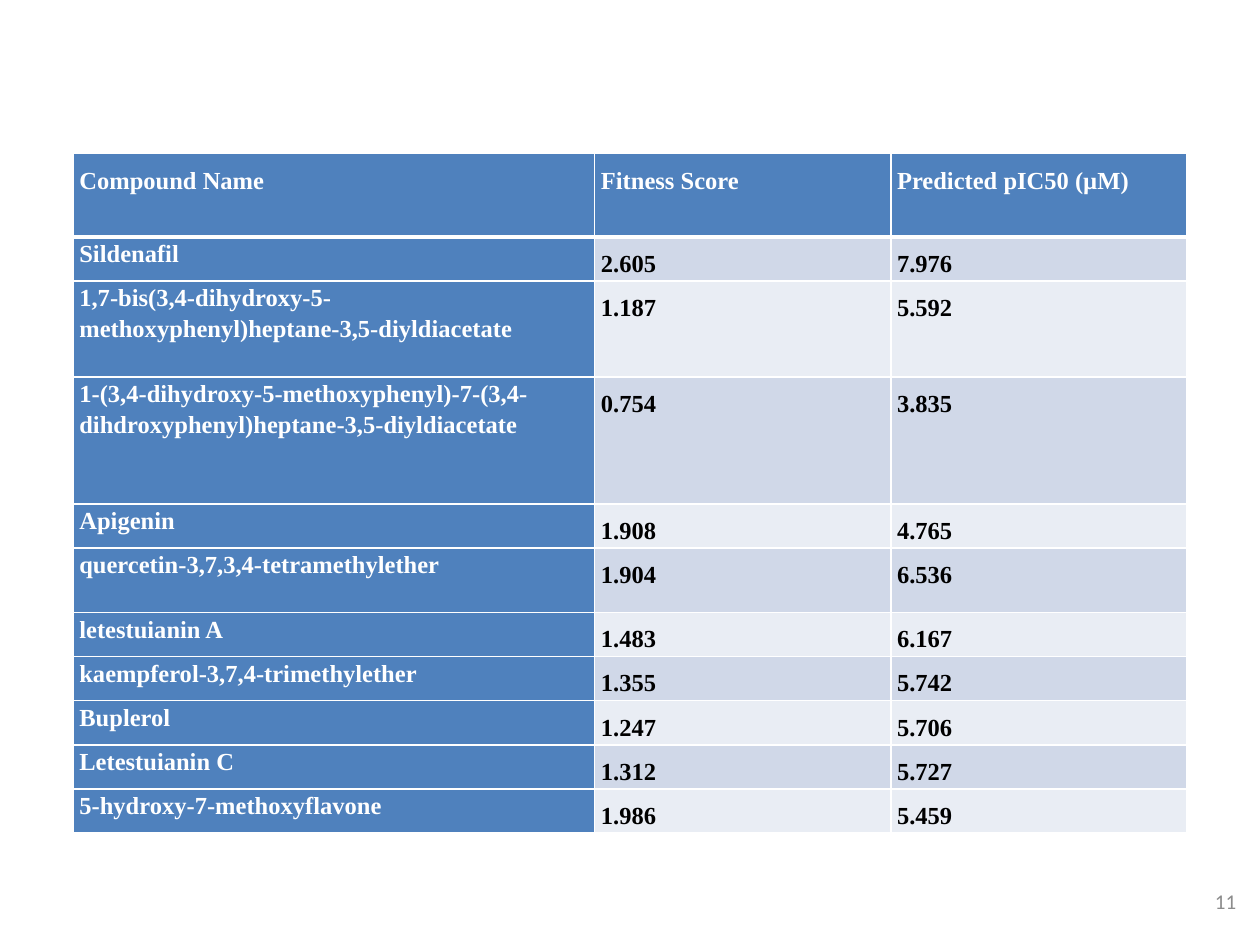
import pptx
import pptx.dml.color
import pptx.enum.text
import pptx.oxml
import pptx.oxml.ns
import pptx.util

Inches = pptx.util.Inches
Pt = pptx.util.Pt
Align = pptx.enum.text.PP_ALIGN
Anchor = pptx.enum.text.MSO_ANCHOR

HEADINGS = ("Compound Name", "Fitness Score", "Predicted pIC50 (µM)")
COMPOUNDS = [
    ("Sildenafil", "2.605", "7.976"),
    ("1,7-bis(3,4-dihydroxy-5-methoxyphenyl)heptane-3,5-diyldiacetate", "1.187", "5.592"),
    ("1-(3,4-dihydroxy-5-methoxyphenyl)-7-(3,4-dihdroxyphenyl)heptane-3,5-diyldiacetate",
     "0.754", "3.835"),
    ("Apigenin", "1.908", "4.765"),
    ("quercetin-3,7,3,4-tetramethylether", "1.904", "6.536"),
    ("letestuianin A", "1.483", "6.167"),
    ("kaempferol-3,7,4-trimethylether", "1.355", "5.742"),
    ("Buplerol", "1.247", "5.706"),
    ("Letestuianin C", "1.312", "5.727"),
    ("5-hydroxy-7-methoxyflavone", "1.986", "5.459"),
]
COLUMN_WIDTHS = (4.14, 2.35, 2.35)
ROW_HEIGHT = 0.33
TALL_ROWS = {0: 0.66, 2: 0.76, 3: 1.01, 5: 0.51}


def color(value):
    return pptx.dml.color.RGBColor.from_string(value)


class SlideBuilder:
    """Holds the style and the current slide, and adds elements to it."""

    table_font = "Times New Roman"
    number_font = "Calibri"
    accent = "4F81BD"
    bands = ("E9EDF4", "D0D8E8")
    white = "FFFFFF"
    black = "000000"
    gray = "8C8C8C"

    def __init__(self, presentation):
        self.slide = presentation.slides.add_slide(presentation.slide_layouts[6])

    def add_text(self, paragraph, text, font, size, fill, bold=False):
        run = paragraph.add_run()
        run.text = text
        run.font.name = font
        run.font.size = Pt(size)
        run.font.bold = bold
        run.font.color.rgb = color(fill)

    def borders(self, cell, bottom):
        properties = cell._tc.get_or_add_tcPr()
        for side, width in zip("LRTB", (1, 1, 1, bottom)):
            properties.append(pptx.oxml.parse_xml(
                f'<a:ln{side} {pptx.oxml.ns.nsdecls("a")} w="{Pt(width)}">'
                f'<a:solidFill><a:srgbClr val="{self.white}"/></a:solidFill></a:ln{side}>'))

    def cell(self, cell, text, row, column):
        heading = row == 0 or column == 0
        cell.margin_left = cell.margin_right = Inches(0.05)
        cell.margin_top = cell.margin_bottom = 0
        self.borders(cell, 3 if row == 0 else 1)
        cell.fill.solid()
        cell.fill.fore_color.rgb = color(self.accent if heading else self.bands[row % 2])
        paragraph = cell.text_frame.paragraphs[0]
        paragraph.alignment = Align.JUSTIFY
        paragraph.line_spacing = 1.15 if row and column == 0 else 1.5
        self.add_text(paragraph, text, self.table_font, 14,
                      self.white if heading else self.black, bold=True)

    def table(self, left, top, rows):
        heights = [TALL_ROWS.get(index, ROW_HEIGHT) for index in range(len(rows))]
        table = self.slide.shapes.add_table(
            len(rows), len(COLUMN_WIDTHS), Inches(left), Inches(top),
            Inches(sum(COLUMN_WIDTHS)), Inches(sum(heights))).table
        for column, width in zip(table.columns, COLUMN_WIDTHS):
            column.width = Inches(width)
        for row_index, (values, height) in enumerate(zip(rows, heights)):
            table.rows[row_index].height = Inches(height)
            for column_index, text in enumerate(values):
                self.cell(table.cell(row_index, column_index), text, row_index, column_index)

    def slide_number(self, text, left, top, width, height):
        shape = self.slide.shapes.add_textbox(
            Inches(left), Inches(top), Inches(width), Inches(height))
        frame = shape.text_frame
        frame.word_wrap = True
        frame.vertical_anchor = Anchor.MIDDLE
        paragraph = frame.paragraphs[0]
        paragraph.alignment = Align.RIGHT
        self.add_text(paragraph, text, self.number_font, 12, self.gray)


def main():
    presentation = pptx.Presentation()
    presentation.slide_width = Inches(10)
    presentation.slide_height = Inches(7.5)
    builder = SlideBuilder(presentation)
    builder.slide_number("11", 7.58, 6.95, 2.33, 0.4)
    builder.table(0.58, 1.22, [HEADINGS, *COMPOUNDS])
    presentation.save("out.pptx")


if __name__ == "__main__":
    main()
